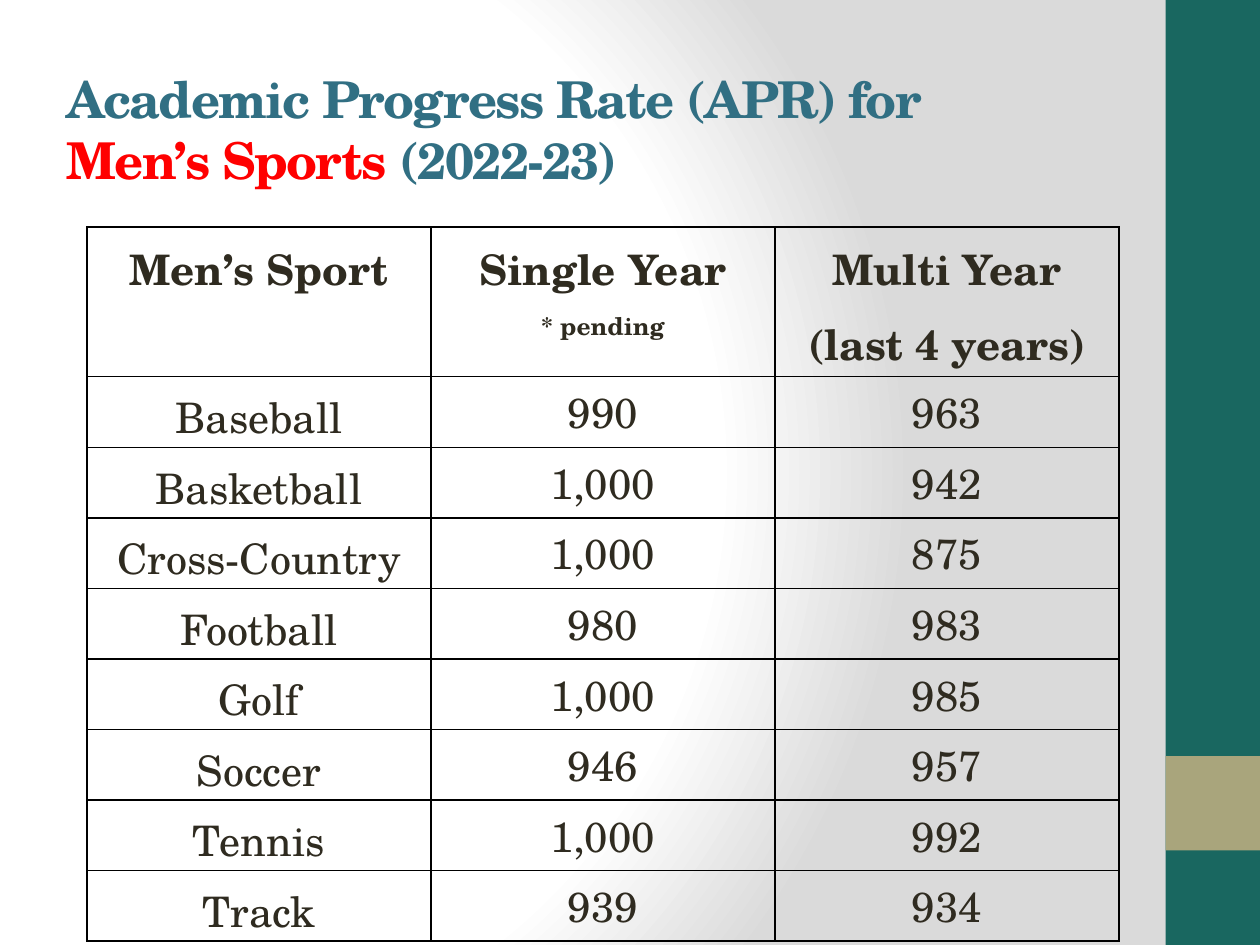
from pptx import Presentation
from pptx.dml.color import RGBColor
from pptx.enum.shapes import MSO_SHAPE as Shape
from pptx.enum.text import MSO_ANCHOR as Anchor, PP_ALIGN as Align
from pptx.oxml import parse_xml
from pptx.oxml.ns import nsdecls
from pptx.util import Inches, Pt

GREEN = RGBColor(0x19, 0x67, 0x60)
TAN = RGBColor(0xA9, 0xA5, 0x7C)
BLUE = RGBColor(0x31, 0x6F, 0x83)
RED = RGBColor(0xFF, 0x00, 0x00)
INK = RGBColor(0x2F, 0x2B, 0x20)
BLACK = RGBColor(0x00, 0x00, 0x00)
BACKGROUND_STOPS = [(0, "FFFFFF"), (75, "FFFFFF"), (100, "DADADA")]

HEADINGS = [
    [("Men’s Sport", 24)],
    [("Single Year", 24), ("* pending", 14)],
    [("Multi Year", 24), ("(last 4 years)", 24)],
]
RATES = [
    ("Baseball", "990", "963"),
    ("Basketball", "1,000", "942"),
    ("Cross-Country", "1,000", "875"),
    ("Football", "980", "983"),
    ("Golf", "1,000", "985"),
    ("Soccer", "946", "957"),
    ("Tennis", "1,000", "992"),
    ("Track", "939", "934"),
]


class SlideBuilder:
    font_name = "TeX Gyre Schola"

    def __init__(self, slide):
        self.slide = slide

    def background(self, stops):
        stop_xml = "".join(
            f'<a:gs pos="{pos * 1000}"><a:srgbClr val="{color}"/></a:gs>'
            for pos, color in stops)
        self.slide.element.cSld.insert(0, parse_xml(
            f'<p:bg {nsdecls("p", "a")}><p:bgPr><a:gradFill rotWithShape="1">'
            f'<a:gsLst>{stop_xml}</a:gsLst><a:path path="circle">'
            '<a:fillToRect l="20000" t="50000" r="100000" b="50000"/></a:path>'
            '</a:gradFill><a:effectLst/></p:bgPr></p:bg>'))

    def band(self, left, top, width, height, color):
        band = self.slide.shapes.add_shape(
            Shape.RECTANGLE, Inches(left), Inches(top), Inches(width), Inches(height))
        band.shadow.inherit = False
        band.fill.solid()
        band.fill.fore_color.rgb = color
        band.line.fill.background()

    def style(self, font, size, color, bold):
        font.name, font.size, font.bold = self.font_name, Pt(size), bold
        font.color.rgb = color

    def title(self, left, top, width, height, lines):
        frame = self.slide.shapes.add_textbox(
            Inches(left), Inches(top), Inches(width), Inches(height)).text_frame
        frame.word_wrap = True
        frame.vertical_anchor = Anchor.MIDDLE
        paragraph = frame.paragraphs[0]
        for index, line in enumerate(lines):
            if index:
                paragraph.add_line_break()
            for text, color in line:
                run = paragraph.add_run()
                run.text = text
                self.style(run.font, 29, color, True)
                run.font._element.set("spc", "-100")

    def cell(self, cell, lines, bold=False, spacing=1.15, anchor=Anchor.TOP):
        cell.margin_left = cell.margin_right = Inches(0.07)
        cell.margin_top = cell.margin_bottom = 0
        cell.vertical_anchor = anchor
        frame = cell.text_frame
        frame.text = "\n".join(text for text, _ in lines)
        for paragraph, (_, size) in zip(frame.paragraphs, lines):
            paragraph.alignment = Align.CENTER
            paragraph.line_spacing = spacing
            self.style(paragraph.font, size, INK, bold)
        # Borders come before the fill in the cell properties
        for side in "LRTB":
            cell._tc.get_or_add_tcPr().append(parse_xml(
                f'<a:ln{side} {nsdecls("a")} w="{Pt(1)}"><a:solidFill>'
                f'<a:srgbClr val="{BLACK}"/></a:solidFill></a:ln{side}>'))
        cell.fill.background()

    def table(self, left, top, column_width, heading_height, row_height,
              headings, rows):
        table = self.slide.shapes.add_table(
            len(rows) + 1, len(headings), Inches(left), Inches(top),
            Inches(column_width * len(headings)),
            Inches(heading_height + row_height * len(rows))).table
        table.first_row = table.horz_banding = False
        for column in table.columns:
            column.width = Inches(column_width)
        for index, row in enumerate(table.rows):
            row.height = Inches(row_height if index else heading_height)
        for column, lines in enumerate(headings):
            self.cell(table.cell(0, column), lines, bold=True)
        for row, (sport, *scores) in enumerate(rows, 1):
            self.cell(table.cell(row, 0), [(sport, 24)])
            for column, score in enumerate(scores, 1):
                self.cell(table.cell(row, column), [(score, 24)],
                          spacing=1.0, anchor=Anchor.MIDDLE)


def main():
    deck = Presentation()
    deck.slide_width, deck.slide_height = Inches(10), Inches(7.5)
    builder = SlideBuilder(deck.slides.add_slide(deck.slide_layouts[6]))

    # Background and side bands
    builder.background(BACKGROUND_STOPS)
    builder.band(9.25, 0, 0.75, 7.5, GREEN)
    builder.band(9.25, 6, 0.75, 0.75, TAN)

    # Title
    builder.title(0.43, 0.69, 8.3, 0.67, [
        [("Academic Progress Rate (APR) for ", BLUE)],
        [("Men’s Sports ", RED), ("(2022-23)", BLUE)],
    ])

    # Progress rates by sport
    builder.table(0.69, 1.8, 2.73, 1.19, 0.56, HEADINGS, RATES)

    deck.save("out.pptx")


if __name__ == "__main__":
    main()
